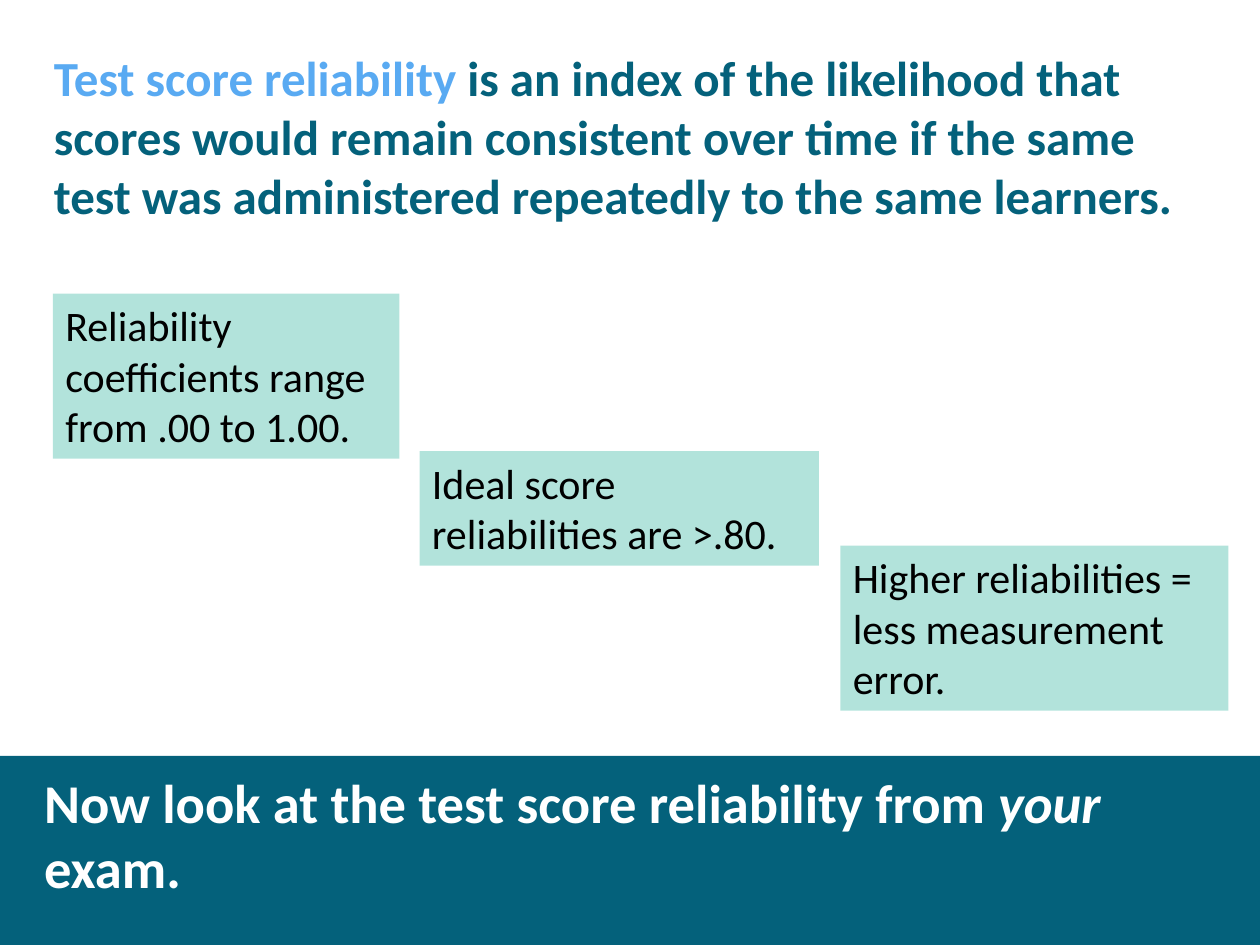
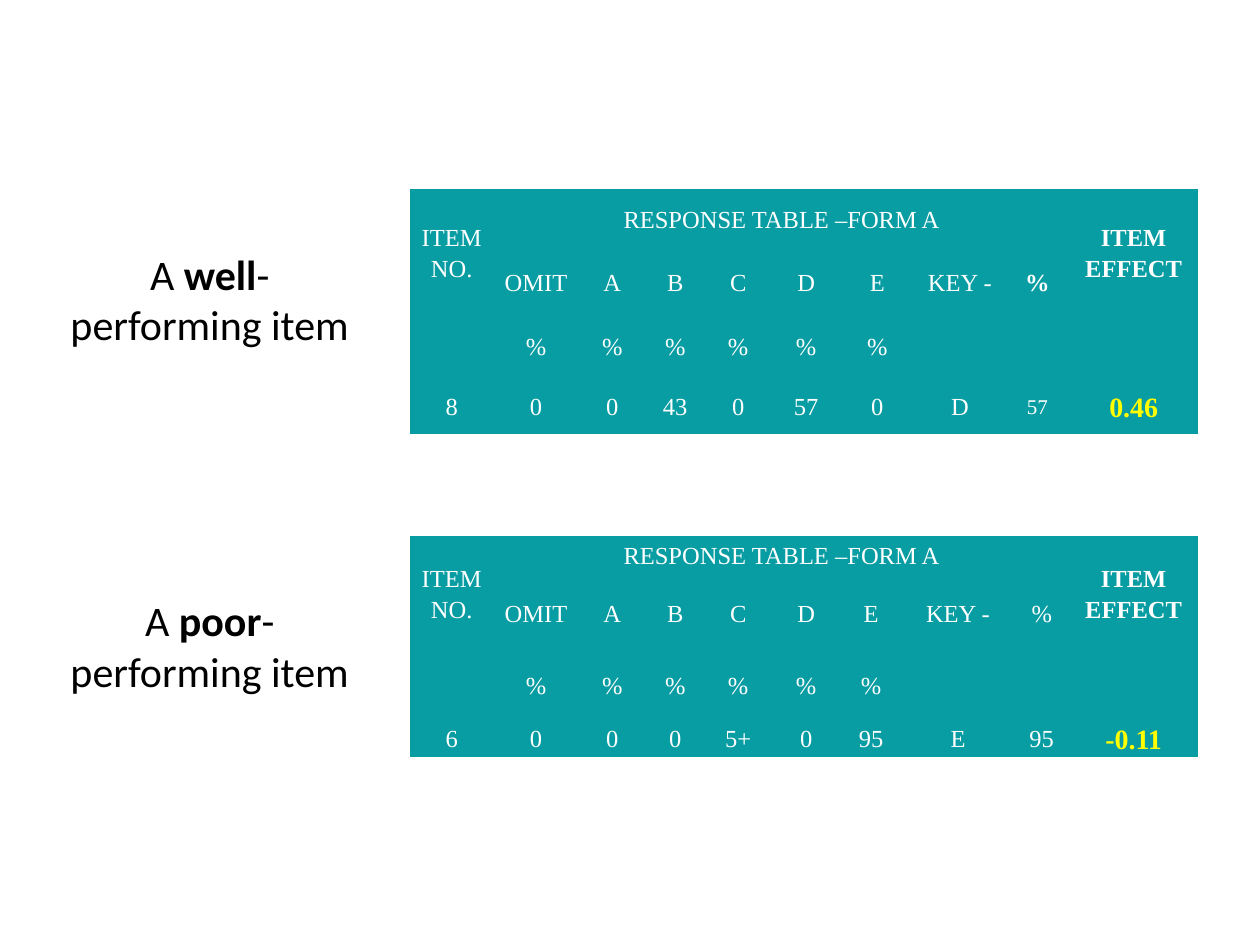
from lxml.etree import SubElement
from pptx import Presentation
from pptx.dml.color import RGBColor
from pptx.enum.shapes import MSO_SHAPE
from pptx.enum.text import MSO_ANCHOR as ANCHOR, MSO_AUTO_SIZE as FIT, PP_ALIGN as ALIGN
from pptx.oxml.ns import qn
from pptx.util import Inches, Pt

COLORS = {"navy": "04617B", "sky": "59AAF2", "mint": "25B19A", "teal": "089CA3",
          "white": "FFFFFF", "black": "000000", "yellow": "FFFF00"}
NO_TABLE_STYLE = "{2D5ABB26-0587-4C30-8999-92F81FD0307C}"
TITLE_ONLY, BLANK = 5, 6


def rgb(name):
    """Return the named colour."""
    return RGBColor.from_string(COLORS[name])


class Deck:
    """Hold the shared style and the current slide."""

    body_font, table_font = "Calibri", "Times New Roman"

    def __init__(self):
        """Start a 10 by 7.5 inch presentation."""
        self.prs = Presentation()
        self.prs.slide_width, self.prs.slide_height = Inches(10), Inches(7.5)

    def new_slide(self, layout):
        """Add a slide and make it current."""
        self.s = self.prs.slides.add_slide(self.prs.slide_layouts[layout])

    def place(self, sp, left, top, width, height):
        """Move and size a shape."""
        sp.left, sp.top, sp.width, sp.height = map(Inches, (left, top, width, height))

    def run(self, p, text, size=24, color="black", bold=False, italic=None, font=body_font):
        """Add one formatted run to a paragraph."""
        r = p.add_run()
        r.text = text
        r.font.name, r.font.size = font, Pt(size)
        r.font.bold, r.font.italic = bold, italic
        r.font.color.rgb = rgb(color)

    def set_text(self, sp, paragraphs, align=ALIGN.LEFT, anchor=ANCHOR.TOP,
                 fit=FIT.SHAPE_TO_FIT_TEXT, **style):
        """Fill a shape with paragraphs of (text, changes) runs."""
        tf = sp.text_frame
        tf.word_wrap, tf.auto_size, tf.vertical_anchor = True, fit, anchor
        for i, runs in enumerate(paragraphs):
            p = tf.add_paragraph() if i else tf.paragraphs[0]
            p.alignment = align
            for text, changes in runs:
                self.run(p, text, **{**style, **changes})

    def text(self, box, paragraphs, **style):
        """Add a text box."""
        self.set_text(self.s.shapes.add_textbox(*map(Inches, box)), paragraphs, **style)

    def rect(self, box, color, opacity=None):
        """Add a plain filled rectangle."""
        sp = self.s.shapes.add_shape(MSO_SHAPE.RECTANGLE, *map(Inches, box))
        sp.shadow.inherit = False
        sp.line.fill.background()
        sp.fill.solid()
        sp.fill.fore_color.rgb = rgb(color)
        if opacity:
            tint = sp.fill._xPr.find(qn("a:solidFill"))[0]
            SubElement(tint, qn("a:alpha")).set("val", str(opacity * 1000))
        return sp

    def note(self, box, text):
        """Add a pale box with one statement."""
        self.set_text(self.rect(box, "mint", 35), [[(text, {})]])

    def banner_title(self, runs):
        """Put the slide title on a dark band along the bottom."""
        title = self.s.shapes.title
        band = self.rect((0, 6, 10, 1.5), "navy")
        title._element.addprevious(band._element)
        self.place(title, 0.25, 6.08, 9.75, 1.08)
        self.set_text(title, [runs], anchor=ANCHOR.MIDDLE, fit=FIT.NONE,
                      size=31.2, color="white", bold=True)

    def response_table(self, top, widths, heights, answers, changes):
        """Add an item response table with a two-level heading."""
        rows = [["ITEM NO.", "RESPONSE TABLE –FORM A"] + [""] * 7 + ["ITEM EFFECT"],
                ["", "OMIT", *"ABCDE", "KEY -", "%", ""],
                [""] + ["%"] * 6 + [""] * 3,
                answers]
        changes = {(0, 9): {"bold": True},
                   (3, 9): {"size": 16, "color": "yellow", "bold": True}, **changes}
        box = map(Inches, (3.25, top, sum(widths), sum(heights)))
        table = self.s.shapes.add_table(len(rows), len(widths), *box).table
        table._tbl.tblPr.find(qn("a:tableStyleId")).text = NO_TABLE_STYLE
        table.first_row = table.horz_banding = False
        for column, width in zip(table.columns, widths):
            column.width = Inches(width)
        for row, height in zip(table.rows, heights):
            row.height = Inches(height)
        for start, end in (((0, 0), (1, 0)), ((0, 1), (0, 8)), ((0, 9), (1, 9))):
            table.cell(*start).merge(table.cell(*end))
        for i, values in enumerate(rows):
            for j, value in enumerate(values):
                self.cell(table.cell(i, j), value, changes.get((i, j), {}))

    def cell(self, cell, value, changes):
        """Fill and format one table cell."""
        cell.fill.solid()
        cell.fill.fore_color.rgb = rgb("teal")
        cell.vertical_anchor = ANCHOR.MIDDLE
        cell.margin_left = cell.margin_right = Inches(0.07)
        cell.margin_top = cell.margin_bottom = 0
        if value:
            p = cell.text_frame.paragraphs[0]
            p.alignment, p.line_spacing = ALIGN.CENTER, 1.15
            self.run(p, value, **{"size": 14, "color": "white",
                                  "font": self.table_font, **changes})


def reliability_slide(deck):
    """Build the slide that defines score reliability."""
    deck.new_slide(TITLE_ONLY)
    deck.banner_title([("Now look at the test score reliability from ", {}),
                       ("your", {"italic": True}), (" exam.", {})])
    deck.text((0.33, 0.33, 9.42, 1.51),
              [[("Test score reliability ", {"color": "sky"}),
                ("is an index of the likelihood that scores would remain consistent over time "
                 "if the same test was administered repeatedly to the same learners.", {})]],
              size=28, color="navy", bold=True)
    deck.note((0.42, 2.33, 2.75, 1.31), "Reliability coefficients range from .00 to 1.00.")
    deck.note((3.33, 3.58, 3.17, 0.91), "Ideal score reliabilities are >.80.")
    deck.note((6.67, 4.33, 3.08, 1.31), "Higher reliabilities = less measurement error.")


def item_slide(deck):
    """Build the slide that compares two test items."""
    deck.new_slide(BLANK)
    for top, quality in ((1.92, "well"), (4.67, "poor")):
        deck.text((0.25, top, 2.83, 0.91),
                  [[("A ", {}), (quality, {"bold": True}), ("-", {})],
                   [("performing item", {})]], align=ALIGN.CENTER)
    shared = [0.67, 0.67, 0.54, 0.46, 0.54, 0.54]
    deck.response_table(4.25, shared + [0.49, 0.89, 0.44, 1.02], [0.3, 0.61, 0.54, 0.3],
                        ["6", "0", "0", "0", "5+", "0", "95", "E", "95", "-0.11"], {})
    deck.response_table(1.5, shared + [0.59, 0.72, 0.51, 1.02], [0.46, 0.49, 0.49, 0.46],
                        ["8", "0", "0", "43", "0", "57", "0", "D", "57", "0.46"],
                        {(1, 8): {"bold": True}, (3, 8): {"size": 12}})


def main():
    """Build and save the deck."""
    deck = Deck()
    reliability_slide(deck)
    item_slide(deck)
    deck.prs.save("out.pptx")


if __name__ == "__main__":
    main()
